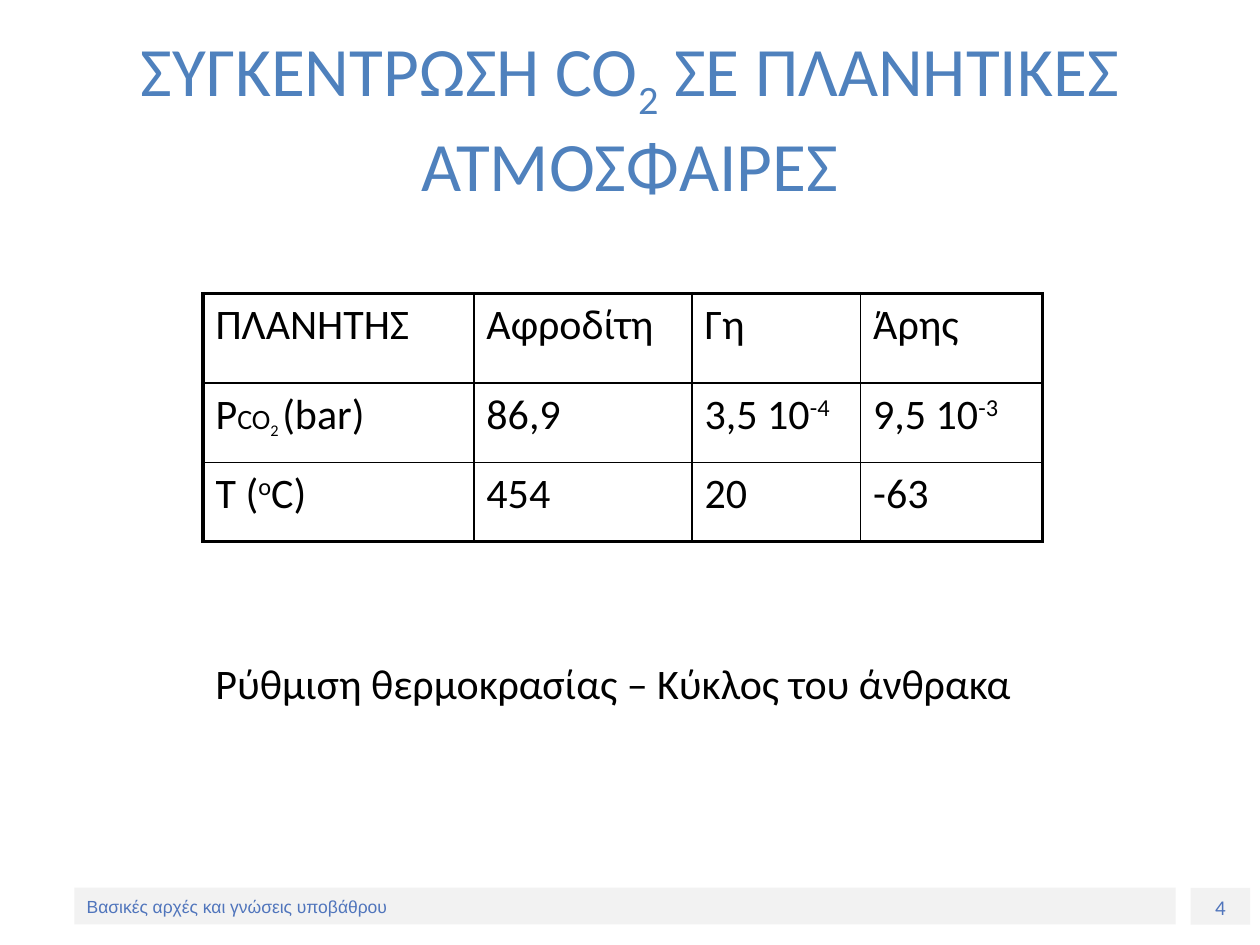
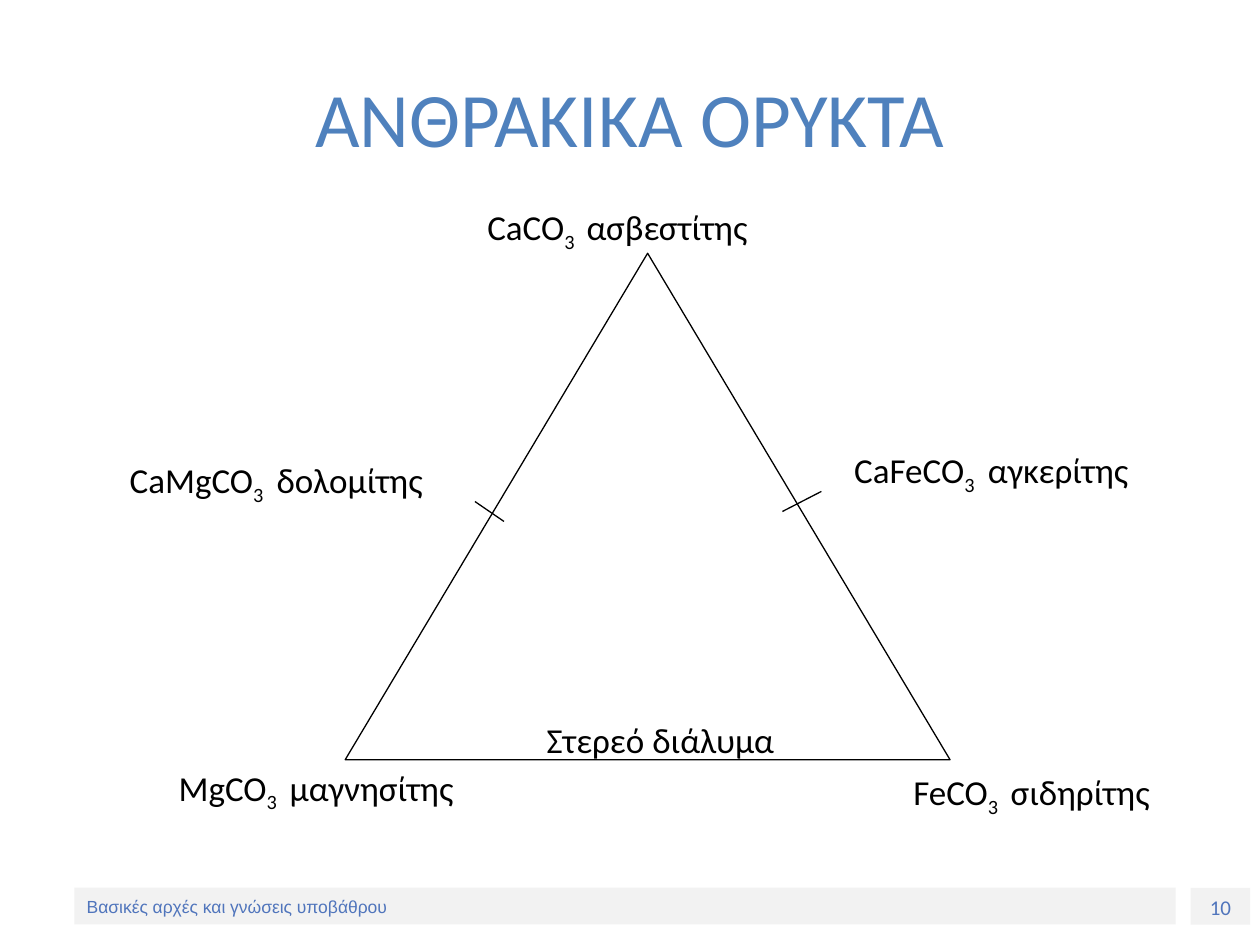
from lxml import etree
from pptx import Presentation
from pptx.dml.color import RGBColor
from pptx.enum import shapes, text
from pptx.oxml import ns
from pptx.util import Pt

BLACK, TITLE_BLUE, FOOTER_BLUE, BAND_GREY = "000000", "4F81BD", "5075BC", "F2F2F2"
SUB, SUPER = -25, 30
FOOTER = "Βασικές αρχές και γνώσεις υποβάθρου"
TITLE_AREA = (36, 21.6, 648, 90)
FRAME_WIDTH, GRID_WIDTH, THIN_LINE = 2.25, 1, 0.75
COLUMN_WIDTHS = (154.8, 124.7, 96.3, 103.9)
ROW_HEIGHTS = (51, 45.4, 45.4)
PLANETS = [
    ["ΠΛΑΝΗΤΗΣ", "Αφροδίτη", "Γη", "Άρης"],
    [[("P",), ("CO", 0, 16), ("2 ", SUB, 16), ("(bar)",)],
     "86,9", [("3,5 10",), ("-4", SUPER)], [("9,5 10",), ("-3", SUPER)]],
    [[("T (",), ("o", SUPER), ("C)",)], "454", "20", "-63"],
]
MINERALS = [
    ("CaCO", "ασβεστίτης", 271.4, 113.8, 56.8),
    ("CaFeCO", "αγκερίτης", 481, 252.7, 76.4),
    ("FeCO", "σιδηρίτης", 514.8, 437, 55.7),
    ("ΜgCO", "μαγνησίτης", 95, 434.2, 63.5),
    ("CaΜgCO", "δολομίτης", 67, 258.5, 84),
]
TICKS = [(271.4, 286.6, 288, 298), (469.4, 280.8, 447.1, 292.3)]


def colour(value):
    """Turn a hex string into a colour."""
    return RGBColor.from_string(value)


def apply_format(target, values):
    """Set each named attribute on the target."""
    for name, value in values.items():
        setattr(target, name, value)


def write(frame, content, size, ink=BLACK, font="Calibri", align=text.PP_ALIGN.LEFT, tab=None):
    """Write one paragraph of spans given as (words, baseline, size)."""
    para = frame.paragraphs[0]
    para.alignment = align
    if tab:
        stops = etree.SubElement(para._p.get_or_add_pPr(), ns.qn("a:tabLst"))
        etree.SubElement(stops, ns.qn("a:tab"), pos=str(Pt(tab)), algn="l")
    for words, *style in [(content,)] if isinstance(content, str) else content:
        baseline, span_size = (style + [0, size][len(style):])
        span = para.add_run()
        span.text = words
        apply_format(span.font, {"name": font, "size": Pt(span_size), "bold": False})
        span.font.color.rgb = colour(ink)
        if baseline:
            span._r.get_or_add_rPr().set("baseline", str(baseline * 1000))


def add_title(page, content, size):
    """Place and fill the title placeholder."""
    title = page.shapes.title
    apply_format(title, dict(zip(("left", "top", "width", "height"), map(Pt, TITLE_AREA))))
    apply_format(title.text_frame, {"word_wrap": True, "auto_size": text.MSO_AUTO_SIZE.NONE,
                                    "vertical_anchor": text.MSO_ANCHOR.MIDDLE})
    write(title.text_frame, content, size, TITLE_BLUE, align=text.PP_ALIGN.CENTER)


def add_band(page, area, words, anchor, **style):
    """Add one grey footer band with its words."""
    band = page.shapes.add_shape(shapes.MSO_SHAPE.RECTANGLE, *map(Pt, area))
    band.shadow.inherit = False
    band.fill.solid()
    band.fill.fore_color.rgb = colour(BAND_GREY)
    band.line.fill.background()
    apply_format(band.text_frame, {"word_wrap": True, "vertical_anchor": anchor})
    write(band.text_frame, words, ink=FOOTER_BLUE, **style)


def add_page(deck, title, size, number):
    """Add a page with its title and footer bands."""
    page = deck.slides.add_slide(deck.slide_layouts[5])
    add_band(page, (680.4, 507.4, 34, 21), number, text.MSO_ANCHOR.TOP,
             size=12, align=text.PP_ALIGN.CENTER)
    add_band(page, (42.5, 507.2, 629.3, 21), FOOTER, text.MSO_ANCHOR.MIDDLE,
             size=10, font="Arial")
    add_title(page, title, size)
    return page


def add_label(page, content, area, size, tab=None):
    """Add a wrapping text box."""
    box = page.shapes.add_textbox(*map(Pt, area))
    box.text_frame.word_wrap = True
    write(box.text_frame, content, size, tab=tab)


def set_borders(cell, widths):
    """Draw black borders on a cell from a dict of side widths."""
    props = cell._tc.get_or_add_tcPr()
    for place, (side, width) in enumerate(widths.items()):
        line = etree.Element(ns.qn(f"a:ln{side}"), w=str(Pt(width)))
        fill = etree.SubElement(line, ns.qn("a:solidFill"))
        etree.SubElement(fill, ns.qn("a:srgbClr"), val=BLACK)
        props.insert(place, line)


def add_planet_table(page, left, top):
    """Add the planet table with a heavy frame and a fine grid."""
    rows, columns = len(ROW_HEIGHTS), len(COLUMN_WIDTHS)
    table = page.shapes.add_table(rows, columns, Pt(left), Pt(top),
                                  Pt(sum(COLUMN_WIDTHS)), Pt(sum(ROW_HEIGHTS))).table
    apply_format(table, {"first_row": False, "horz_banding": False})
    for column, width in zip(table.columns, COLUMN_WIDTHS):
        column.width = Pt(width)
    for r, (row, height) in enumerate(zip(table.rows, ROW_HEIGHTS)):
        row.height = Pt(height)
        for c, cell in enumerate(row.cells):
            write(cell.text_frame, PLANETS[r][c], 24)
            cell.fill.background()
            outer = {"L": c == 0, "R": c == columns - 1, "T": r == 0, "B": r == rows - 1}
            set_borders(cell, {side: FRAME_WIDTH if edge else GRID_WIDTH
                               for side, edge in outer.items()})


def set_thin_line(shape):
    """Give a shape or connector the thin black line."""
    shape.line.color.rgb = colour(BLACK)
    shape.line.width = Pt(THIN_LINE)


def add_triangle(page, area):
    """Add an unfilled triangle."""
    triangle = page.shapes.add_shape(shapes.MSO_SHAPE.ISOSCELES_TRIANGLE, *map(Pt, area))
    triangle.shadow.inherit = False
    triangle.fill.background()
    set_thin_line(triangle)


def add_tick(page, ends):
    """Add a short line across a triangle side."""
    tick = page.shapes.add_connector(shapes.MSO_CONNECTOR.STRAIGHT, *map(Pt, ends))
    set_thin_line(tick)
    etree.SubElement(tick._element.spPr, ns.qn("a:effectLst"))


def build_planets(deck):
    """Build the page on planetary atmospheres."""
    title = [("ΣΥΓΚΕΝΤΡΩΣΗ CO",), ("2", SUB), (" ΣΕ ΠΛΑΝΗΤΙΚΕΣ ΑΤΜΟΣΦΑΙΡΕΣ",)]
    page = add_page(deck, title, 39.6, "4")
    add_planet_table(page, 116, 167.8)
    add_label(page, "Ρύθμιση θερμοκρασίας – Κύκλος του άνθρακα", (116, 372.2, 521.3, 36), 24)


def build_minerals(deck):
    """Build the page with the carbonate triangle."""
    page = add_page(deck, "ΑΝΘΡΑΚΙΚΑ ΟΡΥΚΤΑ", 44, "10")
    add_triangle(page, (197.3, 144.7, 345.6, 289.4))
    for formula, mineral, left, top, tab in MINERALS:
        add_label(page, [(formula,), ("3", SUB), ("\t" + mineral,)],
                  (left, top, 204.5, 31), 20, tab)
    for ends in TICKS:
        add_tick(page, ends)
    add_label(page, "Στερεό διάλυμα", (305.3, 406.8, 164.2, 31.7), 20)


def main():
    """Build and save the deck."""
    deck = Presentation()
    apply_format(deck, {"slide_width": Pt(720), "slide_height": Pt(540)})
    build_planets(deck)
    build_minerals(deck)
    deck.save("out.pptx")


if __name__ == "__main__":
    main()
